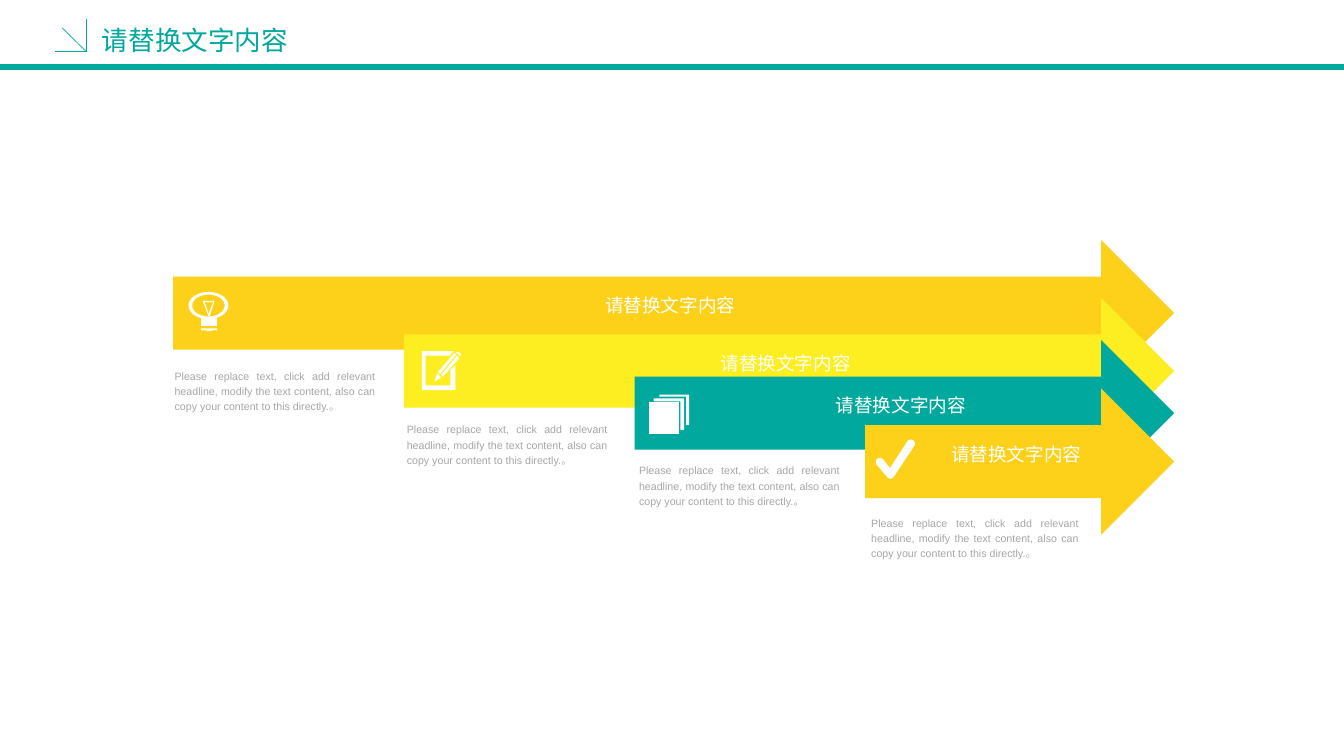
"""Build a slide of four staggered arrows with icons and captions."""
from math import cos, radians, sin

from lxml.etree import SubElement
from pptx import Presentation
from pptx.dml.color import RGBColor
from pptx.enum.shapes import MSO_CONNECTOR as Connector
from pptx.enum.text import MSO_ANCHOR as Anchor, MSO_AUTO_SIZE as AutoSize, PP_ALIGN as Align
from pptx.oxml.ns import qn
from pptx.util import Cm, Pt


def arc(cx, cy, rx, ry, start=0, end=360, steps=48):
    """Return points along an elliptical arc, angles in degrees."""
    angles = [radians(start + (end - start) * n / steps) for n in range(steps + 1)]
    return [(cx + rx * cos(a), cy + ry * sin(a)) for a in angles]


def box(left, top, right, bottom):
    """Return the corners of a rectangle."""
    return [(left, top), (right, top), (right, bottom), (left, bottom)]


COLORS = {"teal": "01A89E", "amber": "FDD01A", "lemon": "FDEE21",
          "white": "FFFFFF", "gray": "A6A6A6"}
FONT = "Arial"
TITLE = "请替换文字内容"
CAPTION = ("Please replace text, click add relevant headline, modify the text content, "
           "also can copy your content to this directly.。")

BULB = [
    [arc(0.53, 0.36, 0.53, 0.36), arc(0.53, 0.36, 0.43, 0.29)],
    [box(0.33, 0.69, 0.76, 0.79)],
    [box(0.33, 0.81, 0.76, 0.91)],
    [[(0.33, 0.97), (0.76, 0.97), (0.76, 1.02), (0.61, 1.02),
      (0.61, 1.04), (0.48, 1.04), (0.48, 1.02), (0.33, 1.02)]],
    [[(0.69, 0.25), (0.66, 0.23), (0.53, 0.25), (0.43, 0.23),
      (0.38, 0.25), (0.53, 0.64), (0.56, 0.64)],
     [(0.53, 0.58), (0.43, 0.25), (0.53, 0.28), (0.66, 0.25)]],
]
PENCIL = [
    [[(0.51, 0.74), (0.41, 0.61), (0.33, 0.84)]],
    [[(0.86, 0.08), (0.43, 0.58), (0.48, 0.64), (0.91, 0.13)]],
    [[(0.51, 0.66), (0.56, 0.71), (0.99, 0.23), (0.94, 0.15)]],
    [[(0.99, 0.05), (0.89, 0.05), (1.02, 0.18), (1.04, 0.12)]],
    [[(0.76, 0.94), (0.1, 0.94), (0.1, 0.15), (0.74, 0.15), (0.84, 0.03),
      (0, 0.03), (0, 1.07), (0.89, 1.07), (0.89, 0.41), (0.76, 0.53)]],
]
PAGES = [
    [[(0.13, 0.18), (0.84, 0.18), (0.84, 0.94), (0.94, 0.94), (0.94, 0.1), (0.13, 0.1)]],
    [[(0.28, 0), (0.28, 0.05), (0.99, 0.05), (0.99, 0.81), (1.07, 0.81), (1.07, 0)]],
    [box(0, 0.2, 0.79, 1.04)],
]
CHECK = [
    [arc(0.11, 0.6, 0.11, 0.11, -35, -215) + arc(0.39, 0.93, 0.11, 0.11, 130, 40)
     + arc(0.93, 0.11, 0.11, 0.11, 35, -145) + [(0.38, 0.76)]],
]

STEPS = [
    dict(label="请替换文字内容", color="amber", top=6.38, icon=BULB, inset=(0.41, 0.41),
         caption_top=9.63, caption_width=5.84),
    dict(label="请替换文字内容", color="lemon", top=7.92, icon=PENCIL, inset=(0.48, 0.41),
         caption_top=11.05, caption_width=5.84),
    dict(label="请替换文字内容", color="teal", top=9.04, icon=PAGES, inset=(0.38, 0.48),
         caption_top=12.14, caption_width=5.84),
    dict(label="请替换文字内容", color="amber", top=10.33, icon=CHECK, inset=(0.28, 0.38),
         caption_top=13.54, caption_width=6.02),
]
WIDTH, HEIGHT = 35.71, 20.09
ARROW_LEFT, ARROW_STEP, HEAD_LEFT, QUARTER = 4.6, 6.13, 29.26, 0.97
CAPTION_LEFT, CAPTION_STEP, CAPTION_HEIGHT = 4.39, 6.17, 1.47
CORNER = (2.29, 1.37)
RULES = [((0, 1.78), (WIDTH, 1.78), 4.5)] + [
    (CORNER, end, 0.5) for end in [(1.45, 1.37), (2.29, 0.51), (1.65, 0.74)]]


def write(shape, text, size, color, align=Align.LEFT, anchor=Anchor.MIDDLE,
          insets=(0.25, 0.13, 0.25, 0.13)):
    """Fill a shape with one formatted paragraph."""
    frame = shape.text_frame
    frame.word_wrap = True
    frame.auto_size = AutoSize.NONE
    frame.vertical_anchor = anchor
    (frame.margin_left, frame.margin_top,
     frame.margin_right, frame.margin_bottom) = map(Cm, insets)
    paragraph = frame.paragraphs[0]
    paragraph.alignment = align
    paragraph.line_spacing = 1.2
    run = paragraph.add_run()
    run.text = text
    run.font.name = FONT
    run.font.size = Pt(size)
    run.font.color.rgb = RGBColor.from_string(COLORS[color])


def draw_outline(shapes, contours, left, top, color):
    """Draw closed contours as one filled freeform."""
    placed = [[(Cm(left + x), Cm(top + y)) for x, y in contour] for contour in contours]
    builder = shapes.build_freeform(*placed[0][0])
    for number, contour in enumerate(placed):
        if number:
            builder.move_to(*contour[0])
        builder.add_line_segments(contour[1:], close=True)
    outline = builder.convert_to_shape()
    outline.shadow.inherit = False
    outline.fill.solid()
    outline.fill.fore_color.rgb = RGBColor.from_string(COLORS[color])
    outline.line.fill.background()
    return outline


def draw_rule(shapes, start, end, weight):
    """Draw a straight teal line."""
    rule = shapes.add_connector(Connector.STRAIGHT, *map(Cm, start + end))
    rule.line.color.rgb = RGBColor.from_string(COLORS["teal"])
    rule.line.width = Pt(weight)
    SubElement(rule._element.spPr, qn("a:effectLst"))


def draw_step(shapes, step, left):
    """Draw one labelled arrow with its icon."""
    neck = HEAD_LEFT - left
    arrow = [(0, QUARTER), (neck, QUARTER), (neck, 0), (neck + 2 * QUARTER, 2 * QUARTER),
             (neck, 4 * QUARTER), (neck, 3 * QUARTER), (0, 3 * QUARTER)]
    body = draw_outline(shapes, [arrow], left, step["top"], step["color"])
    write(body, step["label"], 14, "white", align=Align.CENTER, insets=(1.5, 1.04, 1.68, 1.57))
    inset_x, inset_y = step["inset"]
    parts = [draw_outline(shapes, part, left + inset_x, step["top"] + QUARTER + inset_y, "white")
             for part in step["icon"]]
    if len(parts) > 1:
        shapes.add_group_shape(parts)


def main():
    """Assemble and save the slide."""
    deck = Presentation()
    deck.slide_width, deck.slide_height = Cm(WIDTH), Cm(HEIGHT)
    slide = deck.slides.add_slide(deck.slide_layouts[5])
    shapes = slide.shapes
    title = shapes.title
    title.left, title.top, title.width, title.height = map(Cm, (2.46, 0.38, 6, 1.19))
    write(title, TITLE, 20, "teal")
    for start, end, weight in RULES:
        draw_rule(shapes, start, end, weight)
    for number, step in enumerate(STEPS):
        caption = shapes.add_textbox(
            Cm(CAPTION_LEFT + number * CAPTION_STEP), Cm(step["caption_top"]),
            Cm(step["caption_width"]), Cm(CAPTION_HEIGHT))
        write(caption, CAPTION, 8, "gray", align=Align.JUSTIFY, anchor=Anchor.TOP)
    for number, step in enumerate(STEPS):
        draw_step(shapes, step, ARROW_LEFT + number * ARROW_STEP)
    deck.save("out.pptx")


if __name__ == "__main__":
    main()
